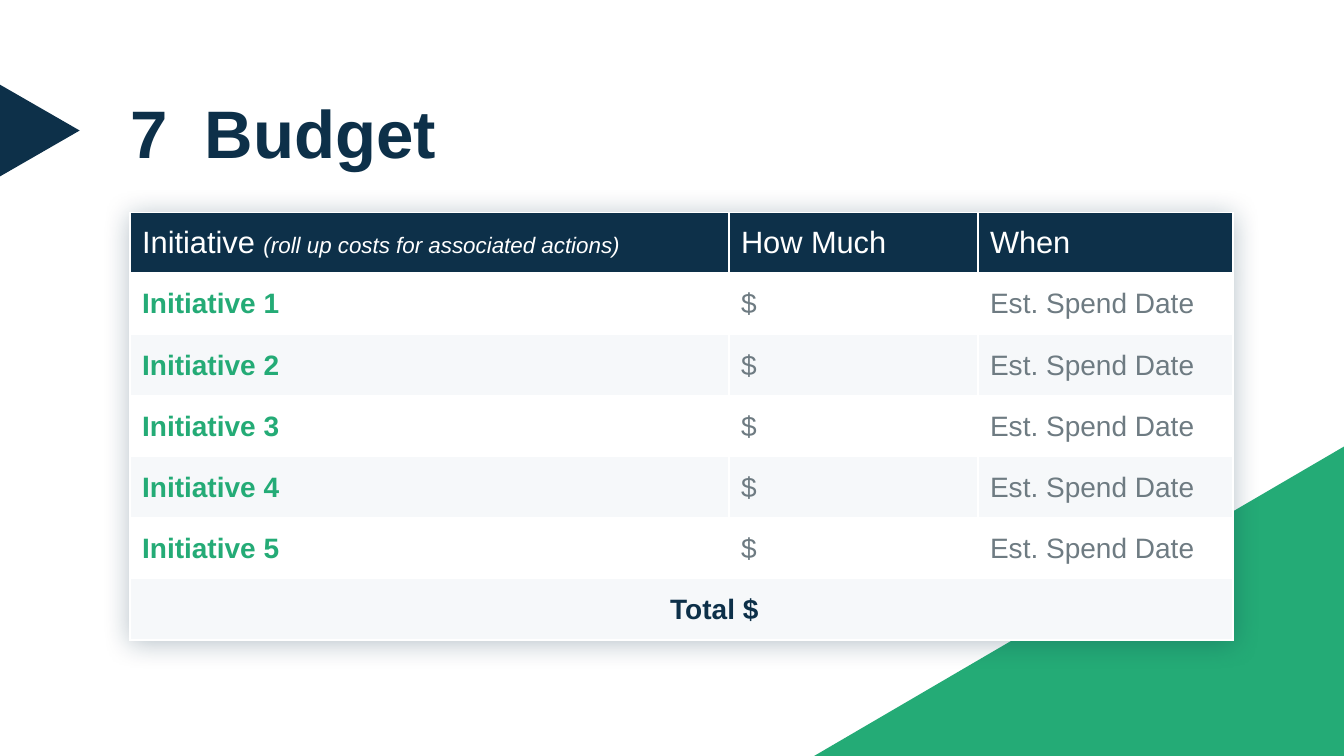
import pptx
import pptx.util
import pptx.dml.color
import pptx.enum.shapes
import pptx.enum.text
import pptx.oxml
import pptx.oxml.ns

Inches, Pt = pptx.util.Inches, pptx.util.Pt
SHAPE = pptx.enum.shapes.MSO_SHAPE
ALIGN = pptx.enum.text.PP_ALIGN
NAVY, GREEN, GREY, WHITE, PALE = "0D3049", "24AB76", "6E7B82", "FFFFFF", "F6F8FA"
NS = pptx.oxml.ns.nsdecls("a")


def rgb(value):
    return pptx.dml.color.RGBColor.from_string(value)


def add_run(p, text, color, **fmt):
    r = p.add_run()
    r.text = text
    r.font.color.rgb = rgb(color)
    for name, value in {"name": "Arial", **fmt}.items():
        setattr(r.font, name, value)


prs = pptx.Presentation()
prs.slide_width, prs.slide_height = Inches(13.33), Inches(7.5)
s = prs.slides.add_slide(prs.slide_layouts[5])

triangles = [
    (SHAPE.RIGHT_TRIANGLE, (8.04, 4.43, 5.29, 3.09), GREEN, 0, "1"),
    (SHAPE.ISOSCELES_TRIANGLE, (-0.06, 0.9, 0.91, 0.79), NAVY, 90, "0"),
]
for kind, box, color, angle, flip in triangles:
    sp = s.shapes.add_shape(kind, *map(Inches, box))
    sp.shadow.inherit = False
    sp.fill.solid()
    sp.fill.fore_color.rgb = rgb(color)
    sp.line.fill.background()
    sp.rotation = angle
    sp._element.spPr.xfrm.set("flipH", flip)

title = s.shapes.title
title.left, title.top, title.width, title.height = map(Inches, (1.29, 1, 10.75, 0.75))
tf = title.text_frame
frame_format = {
    "margin_left": 0, "margin_top": 0, "margin_right": 0, "margin_bottom": 0,
    "word_wrap": True,
    "auto_size": pptx.enum.text.MSO_AUTO_SIZE.NONE,
    "vertical_anchor": pptx.enum.text.MSO_ANCHOR.TOP,
}
for name, value in frame_format.items():
    setattr(tf, name, value)
p = tf.paragraphs[0]
p.alignment = ALIGN.LEFT
p.line_spacing = 0.9
add_run(p, "7  Budget", NAVY, size=Pt(48), bold=True)

head = {"size": Pt(22), "bold": False}
body = {"size": Pt(20), "bold": False}
strong = {"size": Pt(20), "bold": True}
rows = [[(text, WHITE, head) for text in ("Initiative ", "How Much", "When")]]
for n in range(1, 6):
    rows.append([(f"Initiative {n}", GREEN, strong), ("$", GREY, body), ("Est. Spend Date", GREY, body)])
rows.append([("Total $", NAVY, strong)])

widths = [5.94, 2.47, 2.53]
height = 4.24
frame = s.shapes.add_table(len(rows), len(widths), *map(Inches, (1.29, 2.11, sum(widths), height)))
table = frame.table
for column, width in zip(table.columns, widths):
    column.width = Inches(width)
for row in table.rows:
    row.height = Inches(height / len(rows))
table._tbl.tblPr.insert(0, pptx.oxml.parse_xml(
    f'<a:effectLst {NS}><a:outerShdw blurRad="254000" dist="25400" dir="5400000" algn="t" rotWithShape="0">'
    f'<a:srgbClr val="{NAVY}"><a:alpha val="30000"/></a:srgbClr></a:outerShdw></a:effectLst>'))

cell_format = {
    "margin_left": Inches(0.12), "margin_right": Inches(0.12),
    "margin_top": Inches(0.06), "margin_bottom": Inches(0.06),
    "vertical_anchor": pptx.enum.text.MSO_ANCHOR.MIDDLE,
}
for i in range(len(rows)):
    for j in range(len(widths)):
        cell = table.cell(i, j)
        for name, value in cell_format.items():
            setattr(cell, name, value)
        tcPr = cell._tc.get_or_add_tcPr()
        for side in "LRTB":
            heavy = (i, side) in [(0, "B"), (1, "T")]
            tcPr.append(pptx.oxml.parse_xml(
                f'<a:ln{side} {NS} w="{Pt(3 if heavy else 1)}"><a:solidFill>'
                f'<a:srgbClr val="{WHITE}"/></a:solidFill></a:ln{side}>'))
        cell.fill.solid()
        cell.fill.fore_color.rgb = rgb(NAVY if i == 0 else WHITE if i % 2 else PALE)
    for j, (text, color, fmt) in enumerate(rows[i]):
        add_run(table.cell(i, j).text_frame.paragraphs[0], text, color, **fmt)

add_run(table.cell(0, 0).text_frame.paragraphs[0], "(roll up costs for associated actions)",
        WHITE, size=Pt(16), bold=False, italic=True)
total = table.cell(len(rows) - 1, 0)
total.merge(table.cell(len(rows) - 1, len(widths) - 1))
total.margin_left = Inches(0.77)
total.text_frame.paragraphs[0].alignment = ALIGN.CENTER

prs.save("out.pptx")
